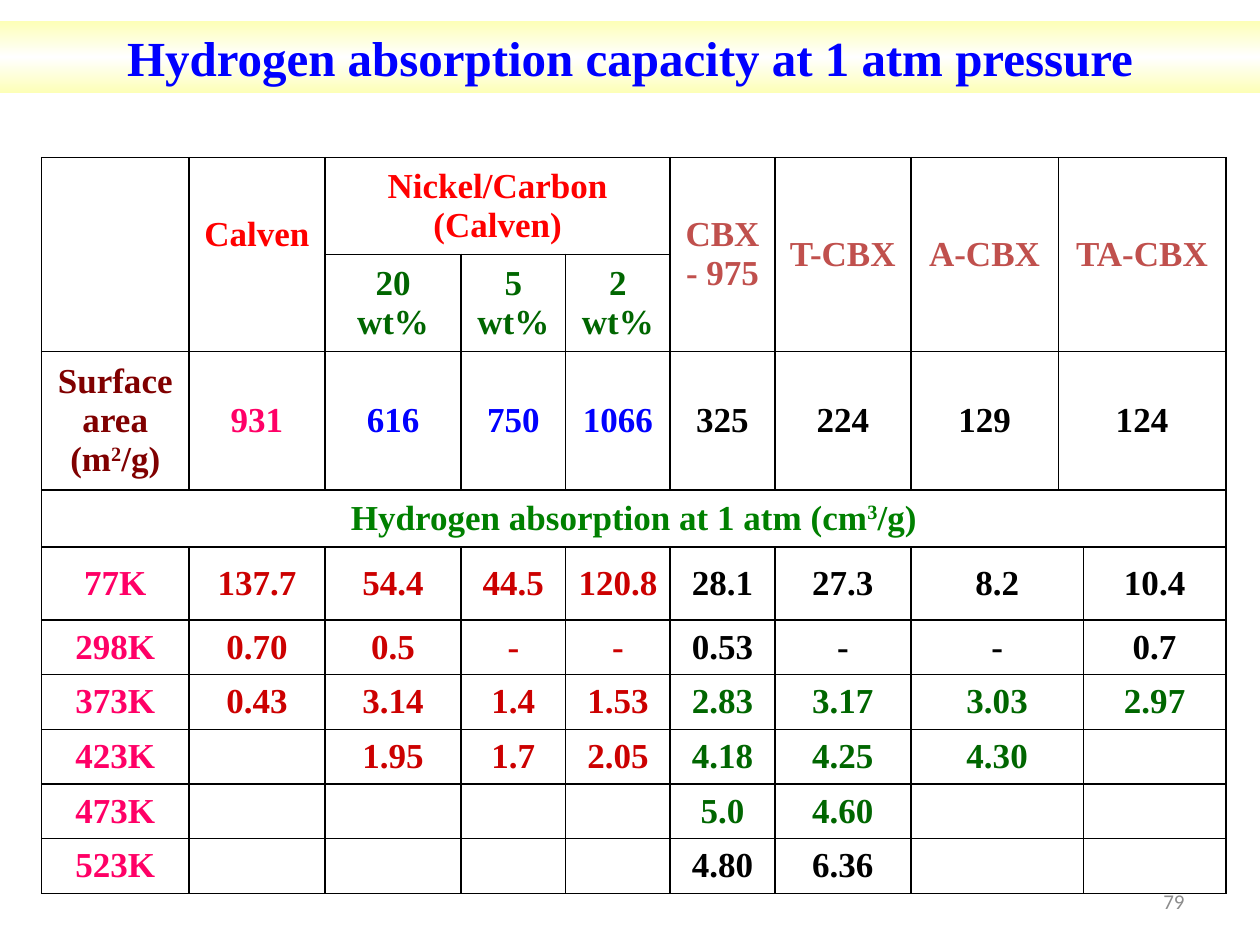
from copy import deepcopy
from dataclasses import dataclass

from lxml import etree
from pptx import Presentation
from pptx import util as u
from pptx.dml.color import RGBColor
from pptx.enum import shapes, text
from pptx.oxml.ns import qn


@dataclass(frozen=True)
class Theme:
    serif: str = "Times New Roman"
    sans: str = "Calibri"
    title_size: int = 28
    table_size: int = 20
    number_size: int = 12
    blue: str = "0000FF"
    red: str = "FF0000"
    crimson: str = "CC0000"
    pink: str = "FF0066"
    rose: str = "C0504D"
    maroon: str = "800000"
    green: str = "008000"
    forest: str = "006600"
    black: str = "000000"
    gray: str = "8C8C8C"
    cream: str = "FDFFB7"
    white: str = "FFFFFF"


THEME = Theme()
COLUMNS = [1.17, 1.08, 1.08, 0.83, 0.83, 0.83, 1.08, 1.17, 0.2, 1.13]
ROWS = [0.77, 0.77, 1.1, 0.45, 0.58] + [0.43] * 5

HEADINGS = {
    (0, 1): ("Calven", THEME.red),
    (0, 2): ("Nickel/Carbon (Calven)", THEME.red),
    (0, 5): ("CBX- 975", THEME.rose),
    (0, 6): ("T-CBX", THEME.rose),
    (0, 7): ("A-CBX", THEME.rose),
    (0, 8): ("TA-CBX", THEME.rose),
    (1, 2): ("20 wt%", THEME.forest),
    (1, 3): ("5 wt%", THEME.forest),
    (1, 4): ("2 wt%", THEME.forest),
    (3, 0): ("Hydrogen absorption at 1 atm (cm|3|/g)", THEME.green),
}
SURFACE_AREA = ["Surface area (m|2|/g)", "931", "616", "750", "1066",
                "325", "224", "129", "124"]
SURFACE_COLORS = [THEME.maroon, THEME.pink] + [THEME.blue] * 3 + [THEME.black] * 4
ABSORPTION = [
    (THEME.black, ["77K", "137.7", "54.4", "44.5", "120.8", "28.1", "27.3", "8.2", "10.4"]),
    (THEME.black, ["298K", "0.70", "0.5", "-", "-", "0.53", "-", "-", "0.7"]),
    (THEME.forest, ["373K", "0.43", "3.14", "1.4", "1.53", "2.83", "3.17", "3.03", "2.97"]),
    (THEME.forest, ["423K", "", "1.95", "1.7", "2.05", "4.18", "4.25", "4.30", ""]),
    (THEME.forest, ["473K", "", "", "", "", "5.0", "4.60", "", ""]),
    (THEME.black, ["523K", "", "", "", "", "4.80", "6.36", "", ""]),
]
FIRST_ABSORPTION_ROW = 4
SPANS = {(0, column): (2, 1) for column in (0, 1, 5, 6, 7)}
SPANS |= {(0, 2): (1, 3), (0, 8): (2, 2), (2, 8): (1, 2), (3, 0): (1, 10)}
SPANS |= {(row, 7): (1, 2) for row in range(FIRST_ABSORPTION_ROW, len(ROWS))}


def table_entries():
    entries = dict(HEADINGS)
    for column, entry in enumerate(zip(SURFACE_AREA, SURFACE_COLORS)):
        entries[2, column] = entry
    for row, (color, values) in enumerate(ABSORPTION, FIRST_ABSORPTION_ROW):
        colors = [THEME.pink] + [THEME.crimson] * 4 + [color] * 4
        for column, entry in zip([*range(8), 9], zip(values, colors)):
            entries[row, column] = entry
    return entries


class SlideBuilder:
    def __init__(self, page, theme):
        self.page = page
        self.theme = theme

    def add_words(self, frame, words, size, color, font=None, bold=True,
                  align=text.PP_ALIGN.CENTER):
        para = frame.paragraphs[0]
        para.alignment = align
        for index, piece in enumerate(words.split("|")):
            span = para.add_run()
            span.text = piece
            span.font.name = font or self.theme.serif
            span.font.size = u.Pt(size)
            span.font.bold = bold
            span.font.color.rgb = RGBColor.from_string(color)
            if index % 2:
                span.font._element.set("baseline", "30000")

    def banner(self, words, left, top, width, height):
        box = self.page.shapes.add_shape(
            shapes.MSO_SHAPE.RECTANGLE, u.Inches(left), u.Inches(top),
            u.Inches(width), u.Inches(height))
        box.shadow.inherit = False
        box.line.fill.background()
        box.fill.gradient()
        box.fill.gradient_angle = 90
        stops = box._element.spPr.find(qn("a:gradFill")).find(qn("a:gsLst"))
        stops.insert(1, deepcopy(stops[0]))
        colors = [self.theme.cream, self.theme.white, self.theme.cream]
        for stop, position, color in zip(box.fill.gradient_stops, [0, 0.5, 1], colors):
            stop.position = position
            stop.color.rgb = RGBColor.from_string(color)
        box.text_frame.word_wrap = True
        box.text_frame.vertical_anchor = text.MSO_ANCHOR.TOP
        self.add_words(box.text_frame, words, self.theme.title_size, self.theme.blue)

    def page_number(self, words, left, top, width, height):
        box = self.page.shapes.add_textbox(
            u.Inches(left), u.Inches(top), u.Inches(width), u.Inches(height))
        box.text_frame.word_wrap = True
        box.text_frame.vertical_anchor = text.MSO_ANCHOR.MIDDLE
        self.add_words(box.text_frame, words, self.theme.number_size, self.theme.gray,
                       self.theme.sans, False, text.PP_ALIGN.RIGHT)

    def border(self, cell):
        properties = cell._tc.get_or_add_tcPr()
        for index, side in enumerate(("a:lnL", "a:lnR", "a:lnT", "a:lnB")):
            line = etree.Element(qn(side), w=str(u.Pt(1)))
            fill = etree.SubElement(line, qn("a:solidFill"))
            etree.SubElement(fill, qn("a:srgbClr"), val=self.theme.black)
            properties.insert(index, line)

    def table(self, entries, spans, columns, rows, left, top):
        grid = self.page.shapes.add_table(
            len(rows), len(columns), u.Inches(left), u.Inches(top),
            u.Inches(sum(columns)), u.Inches(sum(rows))).table
        grid.first_row = grid.horz_banding = False
        for column, width in zip(grid.columns, columns):
            column.width = u.Inches(width)
        for row, height in zip(grid.rows, rows):
            row.height = u.Inches(height)
        for cell in grid.iter_cells():
            cell.fill.background()
            cell.vertical_anchor = text.MSO_ANCHOR.MIDDLE
            self.border(cell)
        for (row, column), (height, width) in spans.items():
            grid.cell(row, column).merge(
                grid.cell(row + height - 1, column + width - 1))
        for (row, column), (words, color) in entries.items():
            if words:
                self.add_words(grid.cell(row, column).text_frame, words,
                               self.theme.table_size, color)
        return grid


def main():
    deck = Presentation()
    deck.slide_width, deck.slide_height = u.Inches(10), u.Inches(7.5)
    page = deck.slides.add_slide(deck.slide_layouts[6])
    builder = SlideBuilder(page, THEME)
    builder.page_number("79", 7.17, 6.95, 2.33, 0.4)
    grid = builder.table(table_entries(), SPANS, COLUMNS, ROWS, 0.33, 1.25)
    grid.cell(0, 1).margin_bottom = u.Inches(0.36)
    builder.banner("Hydrogen absorption capacity at 1 atm pressure", 0, 0.17, 10, 0.57)
    deck.save("out.pptx")


if __name__ == "__main__":
    main()
